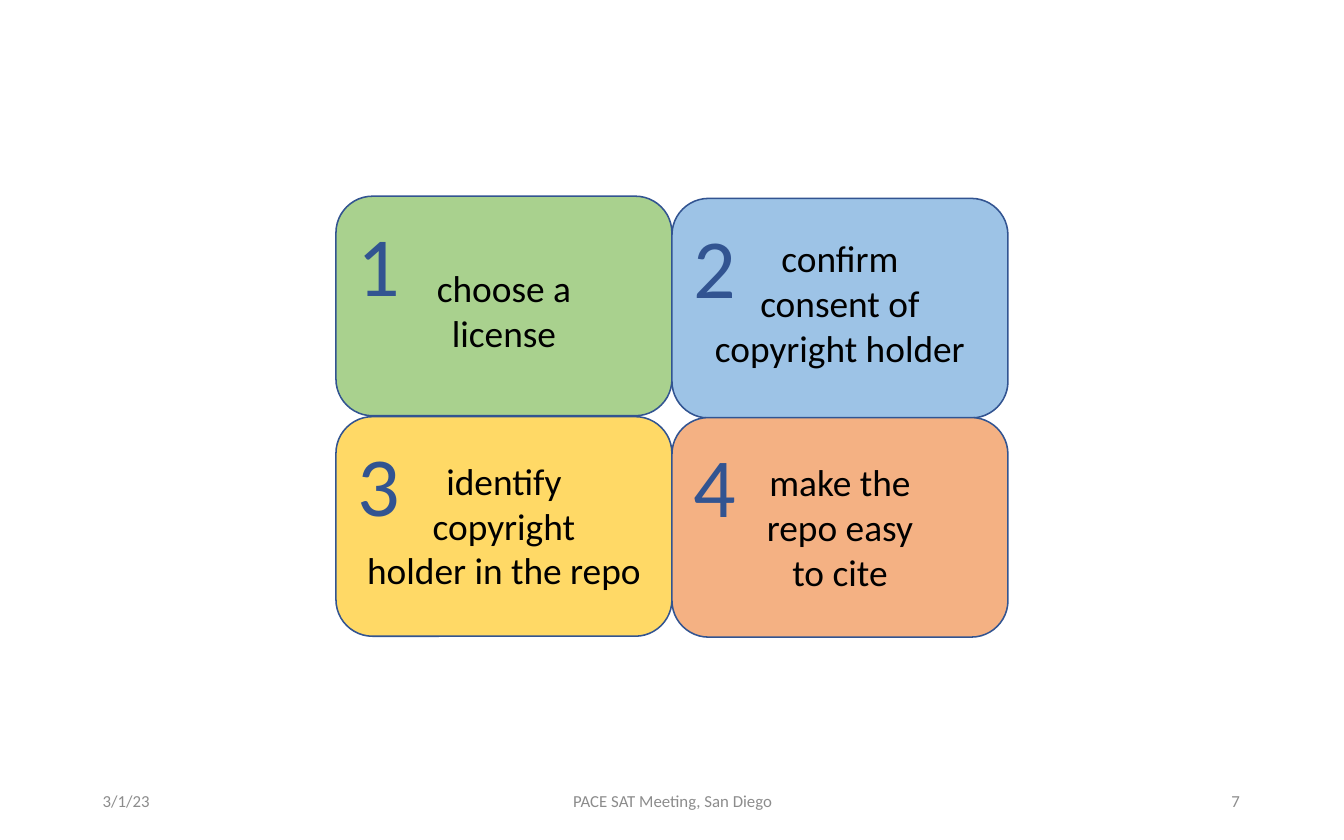
from pptx import Presentation
from pptx.dml.color import RGBColor
from pptx.enum.shapes import MSO_SHAPE
from pptx.enum.text import MSO_ANCHOR, PP_ALIGN
from pptx.util import Cm, Pt

WIDE, HIGH = 7.62, 4.98
BLUE, GRAY, BLACK = "325491", "8C8C8C", "000000"
CARDS = [
    ("A9D18E", 4.45, 5.89, 2.31, ["choose a", "license"]),
    ("9DC3E6", 4.5, 5.21, 3.33, ["confirm", "consent of", "copyright holder"]),
    ("FFD966", 9.45, 10.26, 3.33, ["identify", "copyright", "holder in the repo"]),
    ("F4B183", 9.47, 10.29, 3.33, ["make the", "repo easy", "to cite"]),
]
FOOT = [
    ("3/1/23", 2.08, 6.86, PP_ALIGN.LEFT),
    ("PACE SAT Meeting, San Diego", 10.11, 10.29, PP_ALIGN.CENTER),
    ("7", 21.51, 6.86, PP_ALIGN.RIGHT),
]


def color(code):
    return RGBColor.from_string(code)


def assign(item, values):
    for key, value in values.items():
        setattr(item, key, value)


def write(shape, lines, size, tint, align, anchor=MSO_ANCHOR.TOP):
    frame = shape.text_frame
    assign(frame, {"word_wrap": True, "vertical_anchor": anchor})
    for num, line in enumerate(lines):
        para = frame.add_paragraph() if num else frame.paragraphs[0]
        para.alignment = align
        run = para.add_run()
        run.text = line
        assign(run.font, {"name": "Calibri", "size": Pt(size)})
        run.font.color.rgb = color(tint)


def add_card(slide, box, fill, mark):
    card = slide.shapes.add_shape(MSO_SHAPE.ROUNDED_RECTANGLE, *map(Cm, box))
    card.shadow.inherit = False
    card.fill.solid()
    card.fill.fore_color.rgb = color(fill)
    card.line.color.rgb = color(BLUE)
    card.line.width = Pt(1)
    write(card, [mark], 54, BLUE, PP_ALIGN.LEFT)


def add_label(slide, box, *style):
    write(slide.shapes.add_textbox(*map(Cm, box)), *style)


def add_grid(slide, left):
    spots = [left + num % 2 * WIDE for num in range(len(CARDS))]
    for num, (x, (fill, top, *_)) in enumerate(zip(spots, CARDS), 1):
        add_card(slide, (x, top, WIDE, HIGH), fill, str(num))
    for x, (_, _, top, high, lines) in zip(spots, CARDS):
        add_label(slide, (x, top, WIDE, high), lines, 24, BLACK, PP_ALIGN.CENTER)


def add_foot(slide, top, high):
    for text, left, wide, align in FOOT:
        add_label(slide, (left, top, wide, high), [text], 10.8, GRAY, align,
                  MSO_ANCHOR.MIDDLE)


def main():
    deck = Presentation()
    assign(deck, {"slide_width": Cm(30.48), "slide_height": Cm(19.05)})
    slide = deck.slides.add_slide(deck.slide_layouts[6])
    add_grid(slide, WIDE)
    add_foot(slide, 17.65, 1.02)
    deck.save("out.pptx")


if __name__ == "__main__":
    main()
